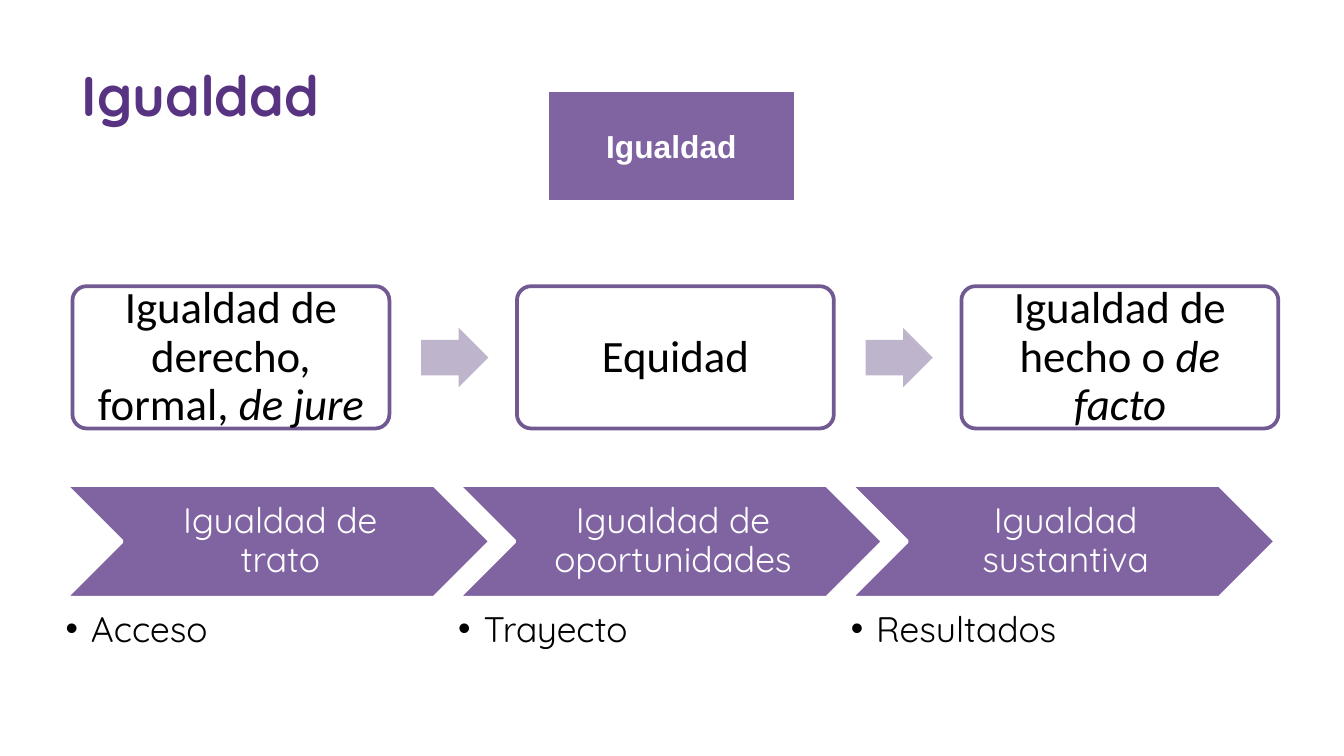
from lxml import etree
from pptx import Presentation
from pptx.dml.color import RGBColor
from pptx.enum.shapes import MSO_SHAPE
from pptx.enum.text import MSO_ANCHOR, PP_ALIGN
from pptx.oxml.ns import qn
from pptx.util import Cm, Pt

RECT = MSO_SHAPE.RECTANGLE
ROUND = MSO_SHAPE.ROUNDED_RECTANGLE
ARROW = MSO_SHAPE.RIGHT_ARROW
CHEVRON = MSO_SHAPE.CHEVRON
TOP, MIDDLE = MSO_ANCHOR.TOP, MSO_ANCHOR.MIDDLE
LEFT, CENTER = PP_ALIGN.LEFT, PP_ALIGN.CENTER

COLORS = {
    "title": "583381",
    "fill": "8064A2",
    "edge": "715A92",
    "arrow": "BEB5CD",
    "white": "FFFFFF",
    "black": "000000",
}


class Deck:
    """Holds the style and the current slide."""

    def __init__(self, width, height):
        self.prs = Presentation()
        self.prs.slide_width, self.prs.slide_height = Cm(width), Cm(height)
        self.slide = self.prs.slides.add_slide(self.prs.slide_layouts[6])

    def color(self, name):
        return RGBColor.from_string(COLORS[name])

    def shape(self, kind, box, fill, line=None, adjust=()):
        item = self.slide.shapes.add_shape(kind, *map(Cm, box))
        item.shadow.inherit = False
        item.fill.solid()
        item.fill.fore_color.rgb = self.color(fill)
        if line:
            item.line.color.rgb = self.color(line)
            item.line.width = Pt(2)
        else:
            item.line.fill.background()
        for i, value in enumerate(adjust):
            item.adjustments[i] = value
        return item

    def label(self, item, runs, font, size, color, bold=False,
              align=CENTER, anchor=MIDDLE, inset=(0.25,) * 4, space=None):
        """Fill a shape with one paragraph; runs are (text, italic) pairs."""
        frame = item.text_frame
        left, top, right, bottom = map(Cm, inset)
        form = {
            "word_wrap": True, "vertical_anchor": anchor,
            "margin_left": left, "margin_top": top,
            "margin_right": right, "margin_bottom": bottom,
        }
        for key, value in form.items():
            setattr(frame, key, value)
        para = frame.paragraphs[0]
        para.alignment, para.line_spacing = align, space
        for text, italic in runs:
            run = para.add_run()
            run.text = text
            look = {"name": font, "size": Pt(size),
                    "bold": bold, "italic": italic}
            for key, value in look.items():
                setattr(run.font, key, value)
            run.font.color.rgb = self.color(color)
        return para

    def text(self, box, runs, *args, **form):
        item = self.slide.shapes.add_textbox(*map(Cm, box))
        return self.label(item, runs, *args, **form)

    def bullet(self, box, text, *args, **form):
        para = self.text(box, [(text, False)], *args, align=LEFT,
                         anchor=TOP, inset=(0,) * 4, **form)
        props = para._p.get_or_add_pPr()
        props.set("marL", str(Cm(0.48)))
        props.set("indent", str(Cm(-0.48)))
        font = etree.SubElement(props, qn("a:buFont"))
        font.set("typeface", "Arial")
        etree.SubElement(props, qn("a:buChar")).set("char", "•")


def main():
    deck = Deck(25.4, 14.29)

    # Title
    deck.text((1.3, 1.02, 22.83, 1.14), [("Igualdad", False)], "Quicksand",
              30, "title", bold=True, align=LEFT, anchor=TOP,
              inset=(0.25, 0.13, 0.25, 0.13))

    # Chevrons, each with a bullet below
    stages = [
        ("Igualdad de trato", "Acceso"),
        ("Igualdad de oportunidades", "Trayecto"),
        ("Igualdad sustantiva", "Resultados"),
    ]
    for i, (stage, note) in enumerate(stages):
        x = 1.24 + 7.42 * i
        deck.shape(CHEVRON, (x, 9.17, 8.03, 2.13), "fill", "white", [0.5])
        deck.text((x + 1.42, 9.17, 5.16, 2.13), [(stage, False)],
                  "Quicksand", 19, "white", space=0.9,
                  inset=(0.2, 0.08, 0.08, 0.08))
        deck.bullet((x, 11.56, 6.4, 0.71), note, "Quicksand", 19, "black",
                    space=0.9)

    # Main concept
    head = deck.shape(RECT, (10.34, 1.7, 4.7, 2.11), "fill", "white")
    deck.label(head, [("Igualdad", False)], "Arial", 17, "white", bold=True)

    # Rounded boxes with arrows between them
    steps = [
        [("Igualdad de derecho, formal, ", False), ("de jure", True)],
        [("Equidad", False)],
        [("Igualdad de hecho o ", False), ("de facto", True)],
    ]
    for i, runs in enumerate(steps):
        x = 1.37 + 8.4 * i
        deck.shape(ROUND, (x, 5.41, 5.99, 2.69), "white", "edge", [0.1])
        deck.text((x + 0.1, 5.49, 5.79, 2.54), runs, "Calibri", 24, "black",
                  space=0.9)
        if i < len(steps) - 1:
            deck.shape(ARROW, (x + 6.59, 6.2, 1.27, 1.12), "arrow",
                       adjust=[0.6, 0.5])

    deck.prs.save("out.pptx")


if __name__ == "__main__":
    main()
